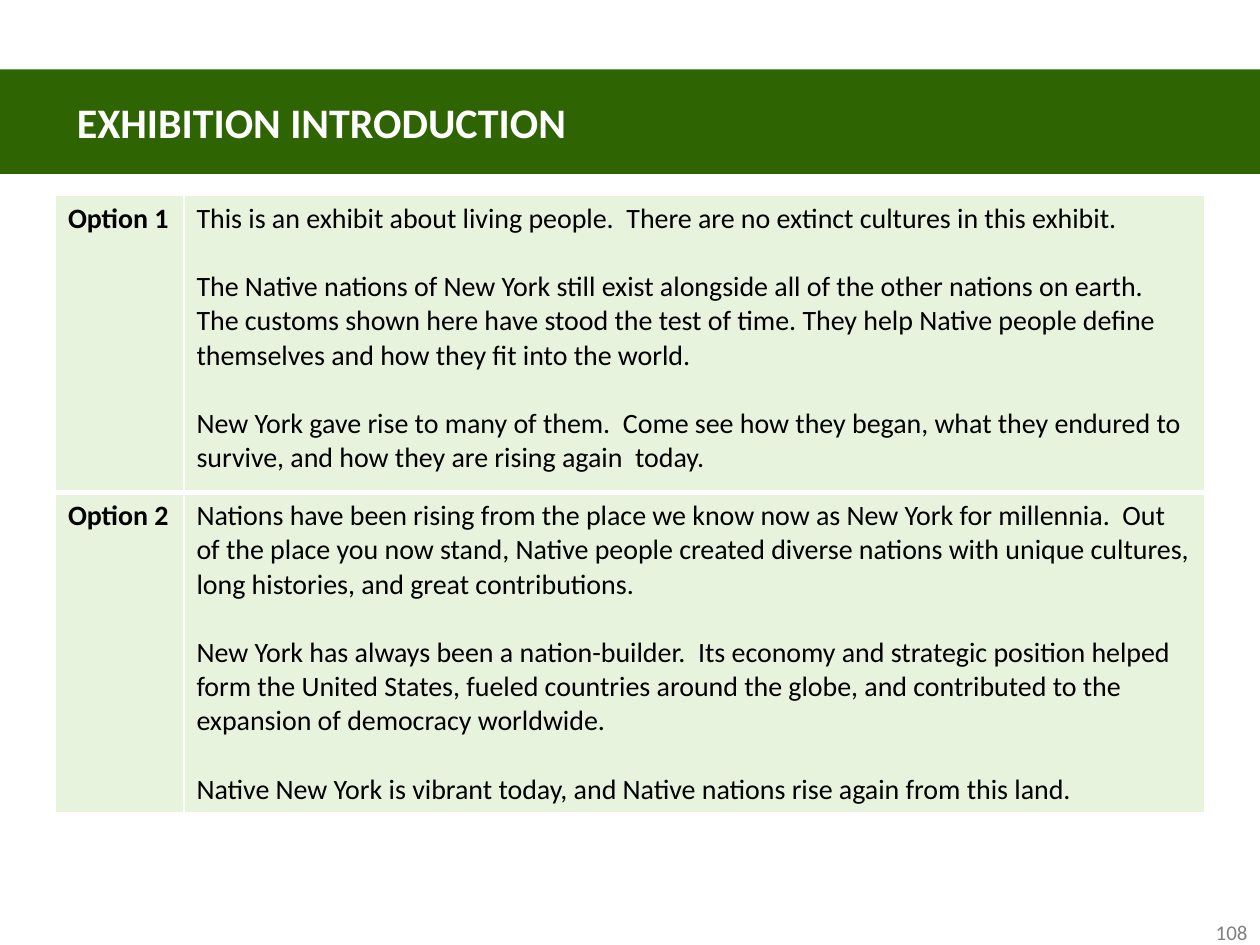
from dataclasses import dataclass

from lxml import etree
from pptx import Presentation
from pptx.dml.color import RGBColor as Rgb
from pptx.enum.text import MSO_ANCHOR as Anchor, MSO_AUTO_SIZE as AutoSize, PP_ALIGN as Align
from pptx.oxml.ns import qn
from pptx.util import Inches, Pt


@dataclass(frozen=True)
class Theme:
    font: str = "Calibri"
    banner: str = "2E6401"
    cell: str = "E7F3DD"
    white: str = "FFFFFF"
    black: str = "000000"
    gray: str = "808080"
    title_size: float = 24
    body_size: float = 16
    number_size: float = 12
    paragraph_gap: float = 19.5
    thin: float = 1
    thick: float = 3


OPTIONS = [
    ("Option 1", [
        "This is an exhibit about living people.  There are no extinct cultures in this exhibit.",
        "The Native nations of New York still exist alongside all of the other nations on earth.  "
        "The customs shown here have stood the test of time. They help Native people define "
        "themselves and how they fit into the world.",
        "New York gave rise to many of them.  Come see how they began, what they endured to "
        "survive, and how they are rising again  today.",
    ]),
    ("Option 2", [
        "Nations have been rising from the place we know now as New York for millennia.  Out of "
        "the place you now stand, Native people created diverse nations with unique cultures, "
        "long histories, and great contributions.",
        "New York has always been a nation-builder.  Its economy and strategic position helped "
        "form the United States, fueled countries around the globe, and contributed to the "
        "expansion of democracy worldwide.",
        "Native New York is vibrant today, and Native nations rise again from this land.",
    ]),
]


class SlideBuilder:
    def __init__(self, slide, theme):
        self.slide = slide
        self.theme = theme

    def add_text(self, frame, texts, size, color, bold=False, align=Align.LEFT):
        for index, text in enumerate(texts):
            para = frame.add_paragraph() if index else frame.paragraphs[0]
            para.alignment = align
            para.space_before = Pt(self.theme.paragraph_gap if index else 0)
            span = para.add_run()
            span.text = text
            span.font.name = self.theme.font
            span.font.size = Pt(size)
            span.font.bold = bold
            span.font.color.rgb = Rgb.from_string(color)

    def title(self, text, left, top, width, height, indent):
        box = self.slide.shapes.title
        box.left, box.top, box.width, box.height = map(Inches, (left, top, width, height))
        box.fill.solid()
        box.fill.fore_color.rgb = Rgb.from_string(self.theme.banner)
        frame = box.text_frame
        frame.auto_size = AutoSize.NONE
        frame.vertical_anchor = Anchor.MIDDLE
        frame.margin_left = Inches(indent)
        self.add_text(frame, [text], self.theme.title_size, self.theme.white, bold=True)

    def page_number(self, text, left, top, width, height):
        box = self.slide.shapes.add_textbox(*map(Inches, (left, top, width, height)))
        box.text_frame.word_wrap = True
        self.add_text(box.text_frame, [text], self.theme.number_size, self.theme.gray,
                      align=Align.RIGHT)

    def border(self, cell, side, width):
        line = etree.SubElement(cell._tc.get_or_add_tcPr(), qn(f"a:ln{side}"), w=str(Pt(width)))
        fill = etree.SubElement(line, qn("a:solidFill"))
        etree.SubElement(fill, qn("a:srgbClr"), val=self.theme.white)

    def cell(self, cell, texts, bold, top, bottom):
        thin = self.theme.thin
        for side, width in (("L", thin), ("R", thin), ("T", top), ("B", bottom)):
            self.border(cell, side, width)
        cell.fill.solid()
        cell.fill.fore_color.rgb = Rgb.from_string(self.theme.cell)
        self.add_text(cell.text_frame, texts, self.theme.body_size, self.theme.black, bold)

    def option_table(self, options, left, top, column_widths, row_heights):
        frame = self.slide.shapes.add_table(
            len(options), len(column_widths), Inches(left), Inches(top),
            Inches(sum(column_widths)), Inches(sum(row_heights)))
        table = frame.table
        table.first_row = table.horz_banding = False
        for column, width in zip(table.columns, column_widths):
            column.width = Inches(width)
        for row, height in zip(table.rows, row_heights):
            row.height = Inches(height)

        # A thick rule separates the options; all other borders are thin
        thin, thick = self.theme.thin, self.theme.thick
        for index, (label, paragraphs) in enumerate(options):
            above = thick if index else thin
            below = thick if index < len(options) - 1 else thin
            self.cell(table.cell(index, 0), [label], True, above, below)
            self.cell(table.cell(index, 1), paragraphs, False, above, below)


def main():
    deck = Presentation()
    deck.slide_width, deck.slide_height = Inches(10), Inches(7.5)
    page = SlideBuilder(deck.slides.add_slide(deck.slide_layouts[5]), Theme())

    # Title banner
    page.title("EXHIBITION INTRODUCTION", 0, 0.55, 10, 0.83, indent=0.61)

    # Introduction options
    page.option_table(OPTIONS, 0.44, 1.55, column_widths=(1.02, 8.1), row_heights=(2.36, 2.52))

    # Page number
    page.page_number("108", 7.67, 7.25, 2.33, 0.25)

    deck.save("out.pptx")


if __name__ == "__main__":
    main()
